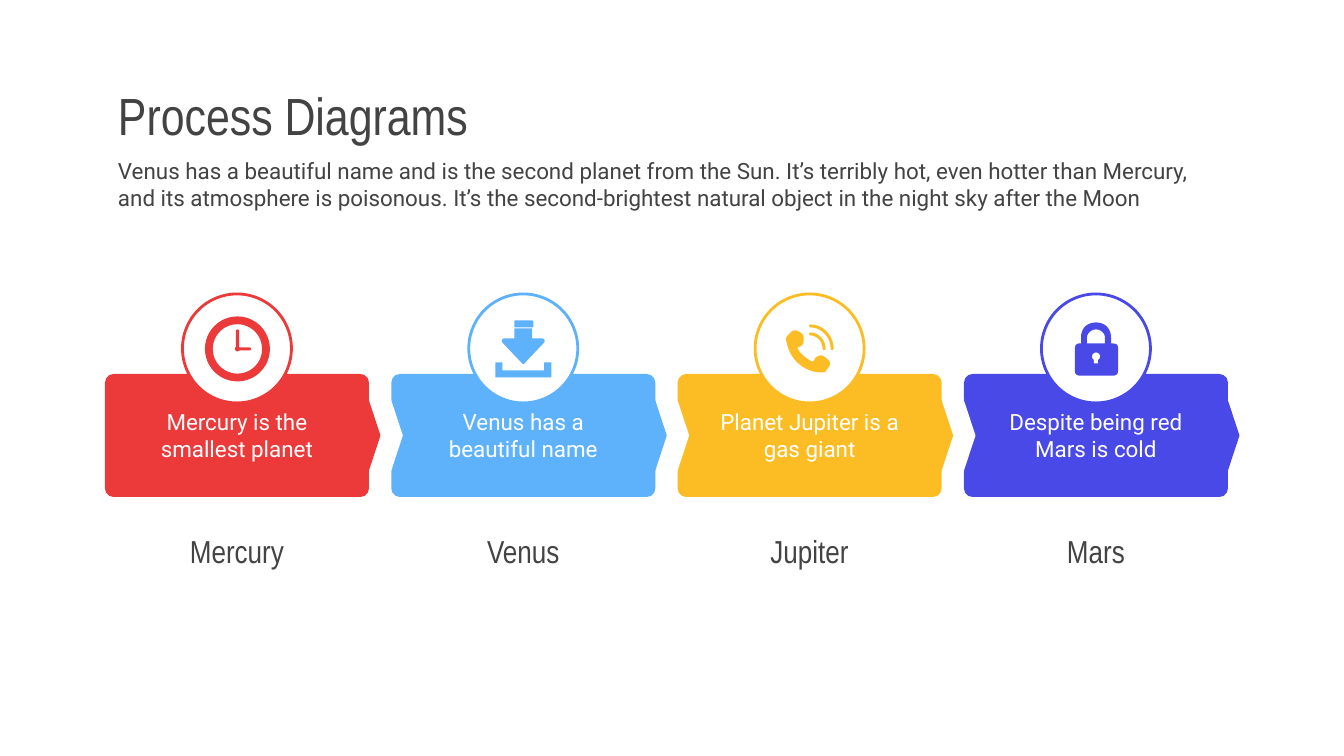
from dataclasses import dataclass

from pptx import Presentation
from pptx import util as u
from pptx.dml.color import RGBColor
from pptx.enum import shapes, text

PX = 914400 / 134.4  # EMU per px
SHAPE = shapes.MSO_SHAPE


@dataclass(frozen=True)
class Theme:
    ink: str = "434343"
    paper: str = "FFFFFF"
    heading: str = "Arial Narrow"
    body: str = "Roboto"
    title_pt: int = 28
    label_pt: int = 17
    body_pt: int = 12
    ring_pt: float = 1.5


THEME = Theme()


def wave(r):
    """Quarter-ring outline with round ends, outer radius r and 3 px thick."""
    q, a, b = r - 3, r * 0.55, (r - 3) * 0.55
    return [(1, -r), (a, -r, r, -a, r, 0), (r, 2, q, 2, q, 0),
            (q, -b, b, -q, 1, -q), (-1, -q, -1, -r, 1, -r)]


TITLE = "Process Diagrams"
INTRO = ("Venus has a beautiful name and is the second planet from the Sun. "
         "It’s terribly hot, even hotter than Mercury, and its atmosphere is "
         "poisonous. It’s the second-brightest natural object in the night sky "
         "after the Moon")
STEPS = [
    ("Mercury", "Mercury is the smallest planet", "EC3A3B", "clock"),
    ("Venus", "Venus has a beautiful name", "5EB2FC", "download"),
    ("Jupiter", "Planet Jupiter is a gas giant", "FCBD24", "phone"),
    ("Mars", "Despite being red Mars is cold", "4949E7", "lock"),
]

# Icon parts, in px from the badge centre.
# Preset: (shape, (x, y, w, h), adjustment or None, is a cut-out).
# Outline: list of points (x, y) and Bézier curves (x1, y1, x2, y2, x, y).
ICONS = {
    "clock": [
        (SHAPE.DONUT, (-32, -32, 65, 65), 0.12, False),
        (SHAPE.ROUNDED_RECTANGLE, (-1, -19, 3, 20), 0.5, False),
        (SHAPE.ROUNDED_RECTANGLE, (0, -1, 14, 3), 0.5, False),
        (SHAPE.OVAL, (-2, -2, 5, 5), None, False),
    ],
    "download": [
        [(-28, 14), (-21, 14), (-21, 22), (21, 22), (21, 14), (28, 14),
         (28, 29), (-28, 29)],
        (SHAPE.ROUNDED_RECTANGLE, (-9, -28, 19, 7), 0.15, False),
        [(-9, -20), (9, -20), (9, -10), (19, -10), (21, -10, 22, -8, 21, -6),
         (2, 14), (1, 16, -1, 16, -2, 14), (-21, -6),
         (-22, -8, -21, -10, -19, -10), (-9, -10)],
    ],
    "phone": [
        [(-15, -18), (-17, -18, -18, -17, -19, -16), (-22, -13),
         (-24, -11, -24, -9, -23, -6), (-20, 10, -7, 23, 10, 24),
         (13, 24, 15, 24, 16, 23), (18, 20), (21, 17, 21, 13, 18, 11), (16, 9),
         (14, 8, 13, 7, 11, 7), (9, 7, 8, 8, 6, 9), (5, 11),
         (4, 12, 4, 12, 4, 13), (2, 13), (-3, 10, -9, 6, -12, 0), (-12, -1),
         (-11, -1, -9, -2, -8, -3), (-7, -4), (-6, -5, -6, -7, -6, -9),
         (-6, -11, -6, -13, -7, -14), (-9, -16), (-11, -17, -13, -18, -15, -18)],
        wave(24),
        wave(16),
    ],
    "lock": [
        [(-15, -4), (-15, -11), (-15, -20, -9, -26, 0, -26),
         (9, -26, 15, -20, 15, -11), (15, -4), (9, -4), (9, -11),
         (9, -15, 5, -19, 0, -19), (-5, -19, -9, -15, -9, -11), (-9, -4)],
        (SHAPE.ROUNDED_RECTANGLE, (-21, -5, 43, 32), 0.12, False),
        (SHAPE.OVAL, (-4, 4, 8, 8), None, True),
        (SHAPE.ROUNDED_RECTANGLE, (-2, 9, 4, 6), 0.15, True),
    ],
}

FIRST_LEFT, LAST_LEFT = 105, 964
CARD_TOP, CARD_W, CARD_H = 374, 264, 123
BADGE_TOP, BADGE = 294, 109
POINT_BASE, POINT_H = 79, 13
LABEL_TOP, LABEL_W, LABEL_H = 519, 234, 63
TEXT_W, TEXT_H = 1136, 71
PAD, CARD_PAD = 13, 27


def emu(*lengths):
    return [u.Emu(round(n * PX)) for n in lengths]


def paint(shape, fill, line=None):
    shape.shadow.inherit = False
    shape.fill.solid()
    shape.fill.fore_color.rgb = RGBColor.from_string(fill)
    if line:
        shape.line.color.rgb = RGBColor.from_string(line)
        shape.line.width = u.Pt(THEME.ring_pt)
    else:
        shape.line.fill.background()
    return shape


def preset(parent, kind, box, fill, line=None, adj=None):
    shape = paint(parent.add_shape(kind, *emu(*box)), fill, line)
    if adj is not None:
        shape.adjustments[0] = adj
    return shape


def flatten(outline, steps=10):
    """Turn an outline of points and Bézier curves into points only."""
    points = [outline[0]]
    for seg in outline[1:]:
        if len(seg) == 2:
            points.append(seg)
            continue
        ctrl = [points[-1], seg[:2], seg[2:4], seg[4:]]
        for i in range(1, steps + 1):
            t = i / steps
            weights = ((1 - t) ** 3, 3 * t * (1 - t) ** 2, 3 * t * t * (1 - t), t ** 3)
            points.append(tuple(sum(w * c[k] for w, c in zip(weights, ctrl))
                                for k in (0, 1)))
    return points


def draw_icon(parent, parts, cx, cy, color):
    for part in parts:
        if isinstance(part, list):
            start, *rest = [(x * 100, y * 100) for x, y in flatten(part)]
            builder = parent.build_freeform(*start, scale=PX / 100)
            builder.add_line_segments(rest, close=True)
            paint(builder.convert_to_shape(*emu(cx, cy)), color)
        else:
            kind, (x, y, w, h), adj, cut = part
            preset(parent, kind, (cx + x, cy + y, w, h),
                   THEME.paper if cut else color, adj=adj)


def write(shape, words, font, size, color, align=text.PP_ALIGN.CENTER, side=PAD):
    tf = shape.text_frame
    left, top = emu(side, PAD)
    frame = dict(word_wrap=True, vertical_anchor=text.MSO_ANCHOR.MIDDLE,
                 margin_left=left, margin_right=left, margin_top=top, margin_bottom=top)
    for name, value in frame.items():
        setattr(tf, name, value)
    p = tf.paragraphs[0]
    p.alignment = align
    r = p.add_run()
    r.text = words
    for name, value in dict(name=font, size=u.Pt(size)).items():
        setattr(r.font, name, value)
    r.font.color.rgb = RGBColor.from_string(color)


def pointer(parent, cx, color):
    """Right-pointing triangle, halfway down the cards."""
    cy = CARD_TOP + CARD_H / 2
    box = (cx - POINT_BASE / 2, cy - POINT_H / 2, POINT_BASE, POINT_H)
    preset(parent, SHAPE.ISOSCELES_TRIANGLE, box, color).rotation = 90


def draw_step(s, i, label, words, color, icon):
    left = FIRST_LEFT + i * (LAST_LEFT - FIRST_LEFT) / (len(STEPS) - 1)
    cx, cy = left + CARD_W / 2, BADGE_TOP + BADGE / 2
    group = s.shapes.add_group_shape().shapes
    card = preset(group, SHAPE.ROUNDED_RECTANGLE, (left, CARD_TOP, CARD_W, CARD_H),
                  color, adj=0.07)
    write(card, words, THEME.body, THEME.body_pt, THEME.paper, side=CARD_PAD)
    preset(group, SHAPE.OVAL, (cx - BADGE / 2, BADGE_TOP, BADGE, BADGE),
           THEME.paper, color)
    pointer(group, left + CARD_W + 5, color)
    if i:
        pointer(group, left + 5, THEME.paper)
    draw_icon(group, ICONS[icon], cx, cy, color)
    box = group.add_textbox(*emu(cx - LABEL_W / 2, LABEL_TOP, LABEL_W, LABEL_H))
    write(box, label, THEME.heading, THEME.label_pt, THEME.ink)


def main():
    prs = Presentation()
    prs.slide_width, prs.slide_height = emu(1344, 756)
    s = prs.slides.add_slide(prs.slide_layouts[6])
    for top, words, font, size in [(79, TITLE, THEME.heading, THEME.title_pt),
                                   (149, INTRO, THEME.body, THEME.body_pt)]:
        box = s.shapes.add_textbox(*emu(FIRST_LEFT, top, TEXT_W, TEXT_H))
        write(box, words, font, size, THEME.ink, text.PP_ALIGN.LEFT)
    for i, step in enumerate(STEPS):
        draw_step(s, i, *step)
    prs.save("out.pptx")


if __name__ == "__main__":
    main()
